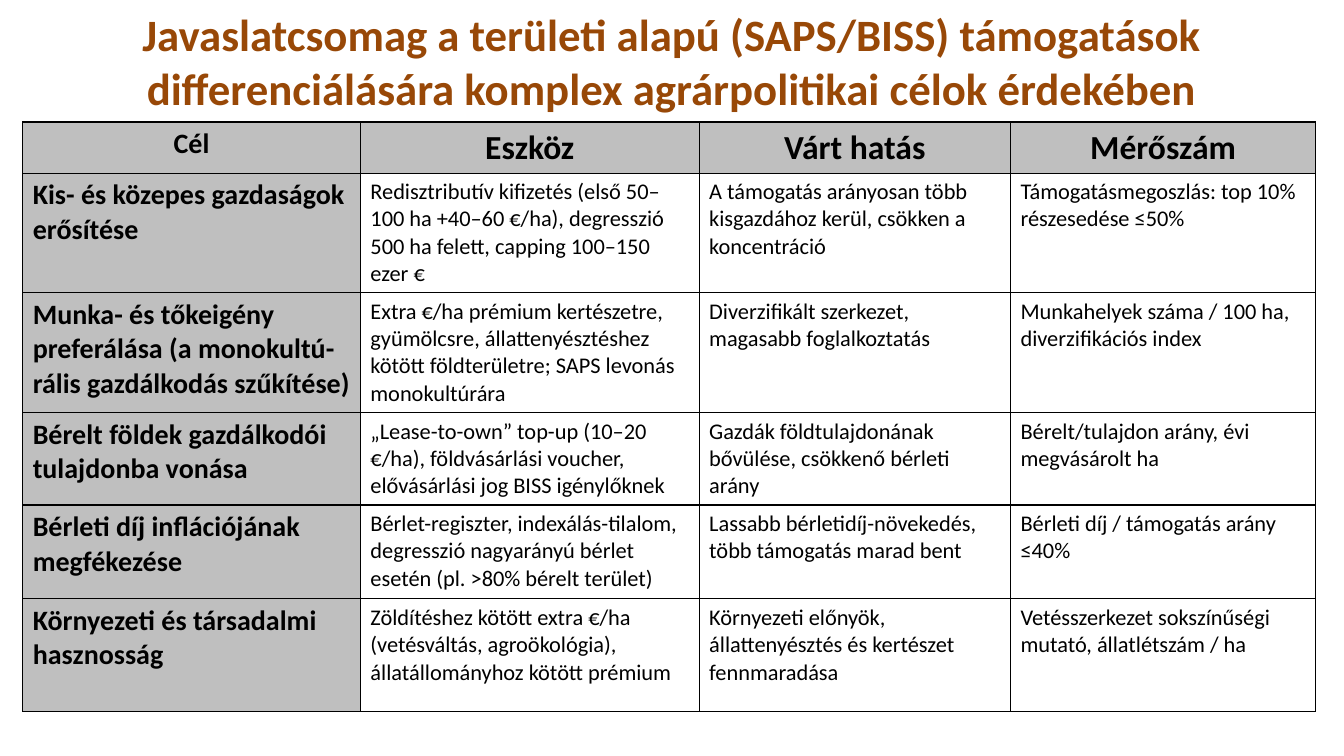
from lxml import etree
from pptx import Presentation
from pptx import util as u
from pptx.dml.color import RGBColor
from pptx.enum import text
from pptx.oxml import ns

HUES = {"title": "984807", "ink": "000000", "head": "BFBFBF"}
COLS = [241.2, 242, 222.4, 218]
ROWS = [36.5, 85.4, 85.7, 65.7, 67, 80.7]
HEADS = ["Cél", "Eszköz", "Várt hatás", "Mérőszám"]
GOALS = [
    ["Kis- és közepes gazdaságok erősítése",
     "Redisztributív kifizetés (első 50–100 ha +40–60 €/ha), degresszió 500 ha felett, capping 100–150 ezer €",
     "A támogatás arányosan több kisgazdához kerül, csökken a koncentráció",
     "Támogatásmegoszlás: top 10% részesedése ≤50%"],
    ["Munka- és tőkeigény preferálása (a monokultú-rális gazdálkodás szűkítése)",
     "Extra €/ha prémium kertészetre, gyümölcsre, állattenyésztéshez kötött földterületre; SAPS levonás monokultúrára",
     "Diverzifikált szerkezet, magasabb foglalkoztatás",
     "Munkahelyek száma / 100 ha, diverzifikációs index"],
    ["Bérelt földek gazdálkodói tulajdonba vonása",
     "„Lease-to-own” top-up (10–20 €/ha), földvásárlási voucher, elővásárlási jog BISS igénylőknek",
     "Gazdák földtulajdonának bővülése, csökkenő bérleti arány",
     "Bérelt/tulajdon arány, évi megvásárolt ha"],
    ["Bérleti díj inflációjának megfékezése",
     "Bérlet-regiszter, indexálás-tilalom, degresszió nagyarányú bérlet esetén (pl. >80% bérelt terület)",
     "Lassabb bérletidíj-növekedés, több támogatás marad bent",
     "Bérleti díj / támogatás arány ≤40%"],
    ["Környezeti és társadalmi hasznosság",
     "Zöldítéshez kötött extra €/ha (vetésváltás, agroökológia), állatállományhoz kötött prémium",
     "Környezeti előnyök, állattenyésztés és kertészet fennmaradása",
     "Vetésszerkezet sokszínűségi mutató, állatlétszám / ha"],
]


class Deck:
    def __init__(self, wide, high, font):
        self.prs = Presentation()
        self.prs.slide_width = u.Pt(wide)
        self.prs.slide_height = u.Pt(high)
        self.font = font
        self.slide = self.prs.slides.add_slide(self.prs.slide_layouts[5])

    def label(self, frame, words, size, hue, bold, center):
        para = frame.paragraphs[0]
        para.alignment = text.PP_ALIGN.CENTER if center else text.PP_ALIGN.LEFT
        run = para.add_run()
        run.text = words
        run.font.name = self.font
        run.font.size = u.Pt(size)
        run.font.bold = bold
        run.font.color.rgb = RGBColor.from_string(HUES[hue])

    def title(self, words, left, top, wide, high):
        shape = self.slide.shapes.title
        shape.left, shape.top = u.Pt(left), u.Pt(top)
        shape.width, shape.height = u.Pt(wide), u.Pt(high)
        frame = shape.text_frame
        frame.word_wrap = True
        frame.auto_size = text.MSO_AUTO_SIZE.NONE
        frame.vertical_anchor = text.MSO_ANCHOR.MIDDLE
        self.label(frame, words, 32, "title", True, True)

    def border(self, cell, width):
        props = cell._tc.get_or_add_tcPr()
        for side in ("a:lnL", "a:lnR", "a:lnT", "a:lnB"):
            line = etree.SubElement(props, ns.qn(side), w=str(u.Pt(width)))
            fill = etree.SubElement(line, ns.qn("a:solidFill"))
            etree.SubElement(fill, ns.qn("a:srgbClr"), val=HUES["ink"])

    def cell(self, cell, words, size, head, center):
        self.border(cell, 1)
        if head:
            cell.fill.solid()
            cell.fill.fore_color.rgb = RGBColor.from_string(HUES["head"])
        else:
            cell.fill.background()
        self.label(cell.text_frame, words, size, "ink", head, center)

    def table(self, data, left, top, cols, rows):
        table = self.slide.shapes.add_table(
            len(rows), len(cols), u.Pt(left), u.Pt(top),
            u.Pt(sum(cols)), u.Pt(sum(rows))).table
        table.first_row = table.horz_banding = False
        for col, wide in zip(table.columns, cols):
            col.width = u.Pt(wide)
        for row, high in zip(table.rows, rows):
            row.height = u.Pt(high)
        for i, line in enumerate(data):
            for j, words in enumerate(line):
                size = 20 if j == 0 else 24 if i == 0 else 16
                self.cell(table.cell(i, j), words, size, i == 0 or j == 0, i == 0)


def main():
    deck = Deck(960, 540, "Calibri")
    deck.title("Javaslatcsomag a területi alapú (SAPS/BISS) támogatások "
               "differenciálására komplex agrárpolitikai célok érdekében",
               0, 0, 960, 86)
    deck.table([HEADS] + GOALS, 16.2, 87.2, COLS, ROWS)
    deck.prs.save("out.pptx")


if __name__ == "__main__":
    main()
